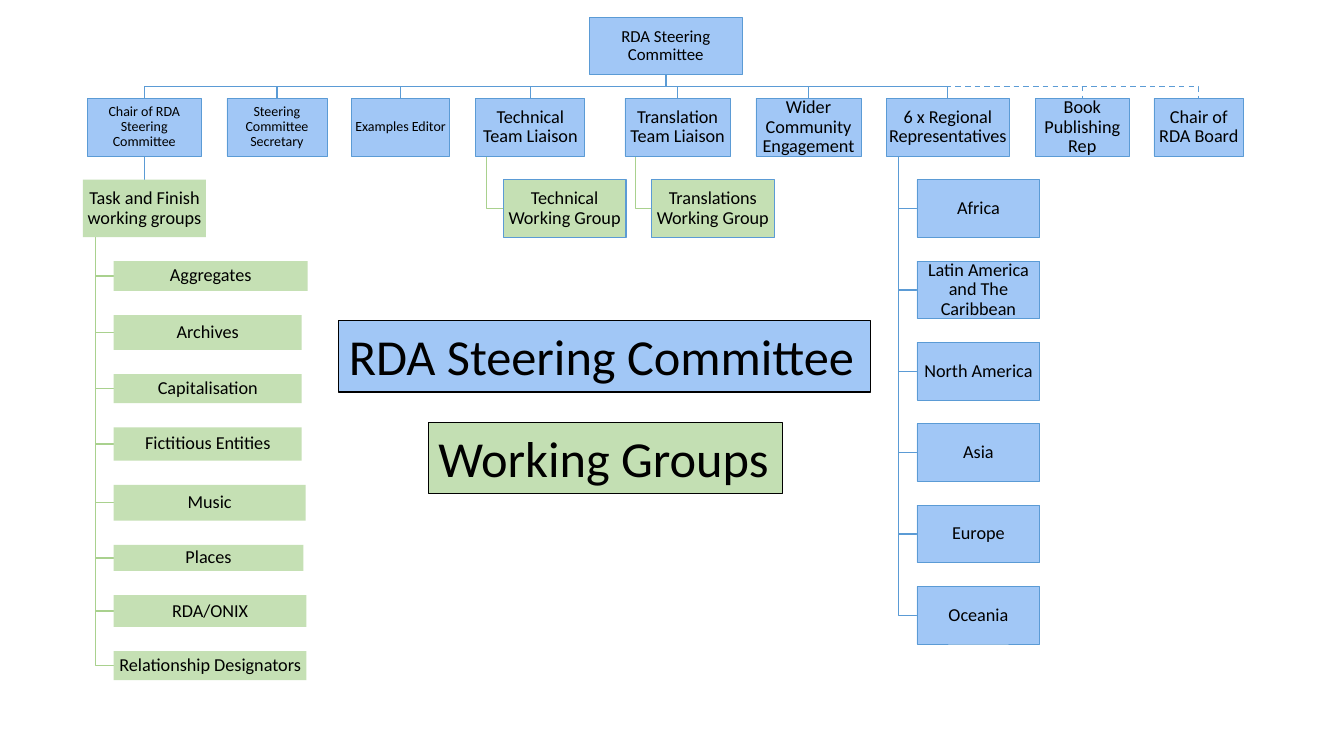
from collections import namedtuple
from pptx import Presentation
from pptx.dml.color import RGBColor
from pptx.enum.dml import MSO_LINE
from pptx.enum.shapes import MSO_CONNECTOR, MSO_SHAPE
from pptx.enum.text import MSO_ANCHOR, PP_ALIGN
from pptx.oxml.ns import qn
from pptx.util import Cm, Pt

BLUE, GREEN, PALE_GREEN = "A1C7F6", "C5E0B4", "C3DFB3"
BLUE_LINE, GREEN_LINE, BLACK = "5B9BD5", "A9D18E", "000000"
FONT = "Calibri"
TOP, ROW_STEP, BOX_H, GAP = 0.43, 2.05, 1.45, 0.61
CHILD_W = 3.1

ROOT = ("RDA Steering Committee", 14.86, 3.84, 12)
MEMBERS = [
    ("Chair of RDA Steering Committee", 2.2, 2.87, 10),
    ("Steering Committee Secretary", 5.72, 2.52, 10),
    ("Examples Editor", 8.86, 2.47, 10),
    ("Technical Team Liaison", 11.99, 2.75, 13),
    ("Translation Team Liaison", 15.75, 2.65, 13),
    ("Wider Community Engagement", 19.05, 2.65, 13),
    ("6 x Regional Representatives", 22.33, 3.11, 13),
    ("Book Publishing Rep", 26.09, 2.37, 13),
    ("Chair of RDA Board", 29.08, 2.26, 13),
]
NON_VOTING = {"Book Publishing Rep", "Chair of RDA Board"}
TASK_GROUP = ("Task and Finish working groups", 2.09, CHILD_W, 13)
TASK_TEAMS = [
    ("Aggregates", 4.89, 0.75),
    ("Archives", 4.74, 0.88),
    ("Capitalisation", 4.74, 0.73),
    ("Fictitious Entities", 4.74, 0.84),
    ("Music", 4.84, 0.9),
    ("Places", 4.78, 0.66),
    ("RDA/ONIX", 4.86, 0.8),
    ("Relationship Designators", 4.86, 0.73),
]
LIAISON_GROUPS = {
    "Technical Team Liaison": "Technical Working Group",
    "Translation Team Liaison": "Translations Working Group",
}
REGIONS = ["Africa", "Latin America and The Caribbean", "North America",
           "Asia", "Europe", "Oceania"]
LEGEND = [
    ("RDA Steering Committee", 8.54, 8.08, 13.39, BLUE),
    ("Working Groups", 10.8, 10.64, 8.92, PALE_GREEN),
]

Box = namedtuple("Box", "text x y w h size fill line width")


def rgb(value):
    return RGBColor.from_string(value)


def row_top(row):
    return TOP + row * ROW_STEP


def make_box(item, row, fill=BLUE, line=BLUE_LINE, width=0.5):
    text, x, w, size = item
    return Box(text, x, row_top(row), w, BOX_H, size, fill, line, width)


def child_left(parent):
    return parent.x + parent.w / 4


def make_child(parent, text, row, fill=BLUE, width=0.5):
    return make_box((text, child_left(parent), CHILD_W, 13), row, fill, width=width)


def write(tf, text, size):
    p = tf.paragraphs[0]
    r = p.add_run()
    r.text = text
    r.font.name, r.font.size = FONT, Pt(size)
    r.font.color.rgb = rgb(BLACK)
    return p


def draw_box(s, box):
    sp = s.shapes.add_shape(MSO_SHAPE.RECTANGLE, Cm(box.x), Cm(box.y), Cm(box.w), Cm(box.h))
    sp.shadow.inherit = False
    sp.fill.solid()
    sp.fill.fore_color.rgb = rgb(box.fill)
    if box.line:
        sp.line.color.rgb = rgb(box.line)
        sp.line.width = Pt(box.width)
    else:
        sp.line.fill.background()
    tf = sp.text_frame
    tf.word_wrap = True
    tf.vertical_anchor = MSO_ANCHOR.MIDDLE
    tf.margin_left = tf.margin_right = tf.margin_top = tf.margin_bottom = Cm(0.03)
    p = write(tf, box.text, box.size)
    p.alignment, p.line_spacing = PP_ALIGN.CENTER, 0.9


def draw_path(s, points, color, dashed=False):
    points = [(Cm(x), Cm(y)) for x, y in points]
    builder = s.shapes.build_freeform(*points[0])
    builder.add_line_segments(points[1:], close=False)
    sp = builder.convert_to_shape()
    sp.shadow.inherit = False
    sp.fill.background()
    sp.line.color.rgb = rgb(color)
    sp.line.width = Pt(1)
    if dashed:
        sp.line.dash_style = MSO_LINE.DASH


def draw_drop(s, parent, child):
    x1, x2 = parent.x + parent.w / 2, child.x + child.w / 2
    bus = (parent.y + parent.h + child.y) / 2
    points = [(x1, parent.y + parent.h), (x1, bus), (x2, bus), (x2, child.y)]
    draw_path(s, points, BLUE_LINE, child.text in NON_VOTING)


def draw_branch(s, parent, child, color):
    x, y = parent.x + parent.w / 10, child.y + child.h / 2
    draw_path(s, [(x, parent.y + parent.h), (x, y), (child.x, y)], color)


def draw_straight(s, parent, child):
    x = Cm(parent.x + parent.w / 2)
    c = s.shapes.add_connector(MSO_CONNECTOR.STRAIGHT, x, Cm(parent.y + parent.h), x, Cm(child.y))
    c.line.color.rgb = rgb(BLUE_LINE)
    c.line.width = Pt(1)
    sp_pr = c._element.spPr
    sp_pr.append(sp_pr.makeelement(qn("a:effectLst"), {}))


def draw_legend(s, text, x, y, w, fill):
    sp = s.shapes.add_textbox(Cm(x), Cm(y), Cm(w), Cm(1.8))
    sp.fill.solid()
    sp.fill.fore_color.rgb = rgb(fill)
    sp.line.color.rgb = rgb(BLACK)
    sp.line.width = Pt(0.75)
    sp.text_frame.word_wrap = True
    write(sp.text_frame, text, 36)


def main():
    prs = Presentation()
    prs.slide_width, prs.slide_height = Cm(33.87), Cm(19.05)
    s = prs.slides.add_slide(prs.slide_layouts[6])

    root = make_box(ROOT, 0)
    members = [make_box(item, 1) for item in MEMBERS]
    by_name = {box.text: box for box in members}
    task_group = make_box(TASK_GROUP, 2, PALE_GREEN, None)

    branches = []
    y = row_top(3)
    for text, w, h in TASK_TEAMS:
        team = Box(text, child_left(task_group), y, w, h, 13, GREEN, None, 0)
        branches.append((task_group, team, GREEN_LINE))
        y += h + GAP
    for liaison, text in LIAISON_GROUPS.items():
        parent = by_name[liaison]
        branches.append((parent, make_child(parent, text, 2, GREEN, 0.75), GREEN_LINE))
    regional = by_name["6 x Regional Representatives"]
    for row, text in enumerate(REGIONS, start=2):
        branches.append((regional, make_child(regional, text, row), BLUE_LINE))

    for member in reversed(members):
        draw_drop(s, root, member)
    draw_straight(s, members[0], task_group)
    for branch in branches:
        draw_branch(s, *branch)
    for box in [root, *members, task_group, *(child for _, child, _ in branches)]:
        draw_box(s, box)
    for item in LEGEND:
        draw_legend(s, *item)

    prs.save("out.pptx")


if __name__ == "__main__":
    main()
